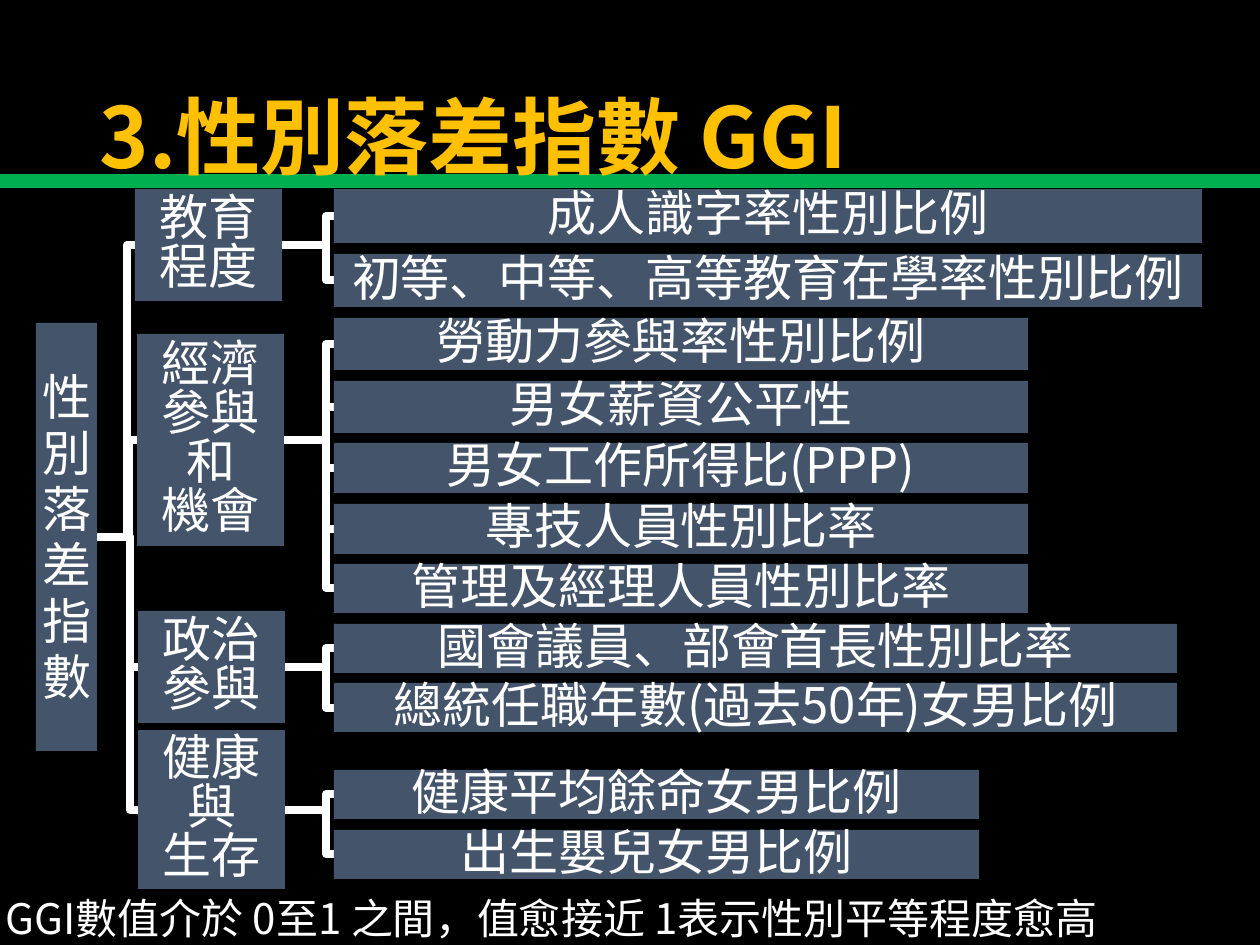
from lxml.etree import SubElement
from pptx import Presentation
from pptx.dml.color import RGBColor
from pptx.enum.shapes import MSO_CONNECTOR as CONNECTOR, MSO_SHAPE as SHAPE
from pptx.enum.text import MSO_ANCHOR as ANCHOR, PP_ALIGN as ALIGN
from pptx.oxml.ns import qn
from pptx.util import Pt

TITLE = "3.性別落差指數 GGI"
NOTE = "GGI數值介於 0至1 之間，值愈接近 1表示性別平等程度愈高"
INDEX = (["性別", "落差", "指數"], (36, 323, 61, 428))
# Each dimension: paragraphs, box, indicator width, indicators as (text, top, height)
DIMENSIONS = [
    (["教育程度"], (135, 189, 147, 112), 868, [
        ("成人識字率性別比例", 189, 54),
        ("初等、中等、高等教育在學率性別比例", 254, 53)]),
    (["經濟參與", "和\v機會"], (137, 334, 147, 212), 694, [
        ("勞動力參與率性別比例", 318, 52),
        ("男女薪資公平性", 381, 52),
        ("男女工作所得比(PPP)", 443, 50),
        ("專技人員性別比率", 504, 50),
        ("管理及經理人員性別比率", 564, 49)]),
    (["政治參與"], (138, 611, 147, 112), 843, [
        ("國會議員、部會首長性別比率", 624, 49),
        ("總統任職年數(過去50年)女男比例", 683, 49)]),
    (["健康", "與", "生存"], (138, 730, 147, 159), 645, [
        ("健康平均餘命女男比例", 770, 49),
        ("出生嬰兒女男比例", 830, 49)]),
]
INDICATOR_LEFT = 334
ELBOW = 8  # distance from the bend to the box it leads to
COLORS = {"back": "000000", "rule": "00B050", "title": "FFC000",
          "box": "44546A", "text": "FFFFFF", "branch": "FFFFFF"}
FONT = "Noto Sans CJK SC"
PX = 914400 / 126


def px(*lengths):
    return [round(length * PX) for length in lengths]


def color(key):
    return RGBColor.from_string(COLORS[key])


def write(frame, paragraphs, size, key="text", align=ALIGN.LEFT, spacing=None, bold=False):
    frame.word_wrap = True
    for i, text in enumerate(paragraphs):
        paragraph = frame.add_paragraph() if i else frame.paragraphs[0]
        paragraph.alignment = align
        if spacing:
            paragraph.line_spacing = spacing
        for j, line in enumerate(text.split("\v")):
            if j:
                paragraph.add_line_break()
            run = paragraph.add_run()
            run.text = line
            run.font.size, run.font.bold, run.font.name = Pt(size), bold, FONT
            run.font.color.rgb = color(key)
            SubElement(run.font._element, qn("a:ea"), typeface=FONT)


def add_box(shapes, paragraphs, box, spacing):
    shape = shapes.add_shape(SHAPE.RECTANGLE, *px(*box))
    shape.shadow.inherit = False
    shape.fill.solid()
    shape.fill.fore_color.rgb = color("box")
    shape.line.fill.background()
    frame = shape.text_frame
    frame.vertical_anchor = ANCHOR.MIDDLE
    frame.margin_left = frame.margin_right = frame.margin_top = frame.margin_bottom = px(2)[0]
    write(frame, paragraphs, 28, align=ALIGN.CENTER, spacing=spacing)


def add_branch(shapes, parent, child):
    """Elbow from the parent's right side to the child's left side."""
    start_x, start_y = parent[0] + parent[2], parent[1] + parent[3] / 2
    end_x, end_y = child[0], child[1] + child[3] / 2
    bend = end_x - ELBOW
    builder = shapes.build_freeform(start_x, start_y, scale=PX)
    builder.add_line_segments([(bend, start_y), (bend, end_y), (end_x, end_y)], close=False)
    branch = builder.convert_to_shape()
    branch.shadow.inherit = False
    branch.fill.background()
    branch.line.color.rgb = color("branch")
    branch.line.width = Pt(4.5)


def add_rule(shapes):
    rule = shapes.add_connector(CONNECTOR.STRAIGHT, *px(0, 181, 1260, 181))
    rule.line.color.rgb = color("rule")
    rule.line.width = Pt(8)
    SubElement(rule.element.spPr, qn("a:effectLst"))


def main():
    deck = Presentation()
    deck.slide_width, deck.slide_height = px(1260, 945)
    slide = deck.slides.add_slide(deck.slide_layouts[5])
    slide.background.fill.solid()
    slide.background.fill.fore_color.rgb = color("back")
    shapes = slide.shapes

    add_rule(shapes)
    title = shapes.title
    title.left, title.top, title.width, title.height = px(87, 50, 1086, 183)
    title.text_frame.vertical_anchor = ANCHOR.MIDDLE
    write(title.text_frame, [TITLE], 48, "title", spacing=0.9, bold=True)
    title.element.getparent().append(title.element)  # in front of the rule

    index_text, index_box = INDEX
    boxes = [(index_text, index_box, Pt(32))]
    branches = []
    for paragraphs, box, width, indicators in DIMENSIONS:
        boxes.append((paragraphs, box, Pt(28)))
        branches.append((index_box, box))
        for text, top, height in indicators:
            indicator_box = (INDICATOR_LEFT, top, width, height)
            boxes.append(([text], indicator_box, 0.9))
            branches.append((box, indicator_box))
    for parent, child in branches:
        add_branch(shapes, parent, child)
    for paragraphs, box, spacing in boxes:
        add_box(shapes, paragraphs, box, spacing)

    note = shapes.add_textbox(*px(-7, 886, 1236, 63))
    write(note.text_frame, [NOTE], 24)
    deck.save("out.pptx")


if __name__ == "__main__":
    main()
